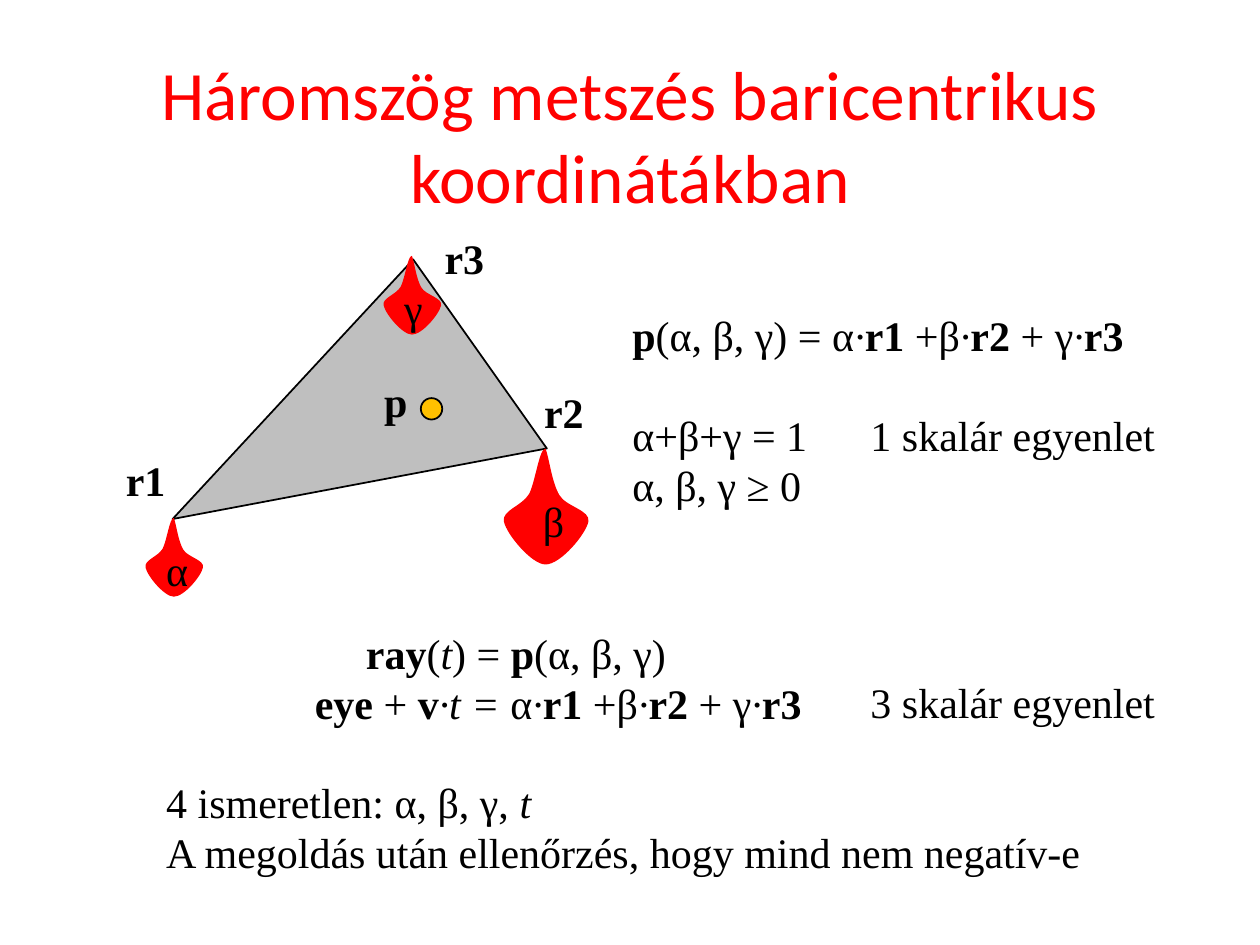
import lxml.etree
import pptx
import pptx.util
import pptx.dml.color
import pptx.enum.shapes
import pptx.enum.text
import pptx.oxml.ns

Inches = pptx.util.Inches
Pt = pptx.util.Pt
Align = pptx.enum.text.PP_ALIGN
qn = pptx.oxml.ns.qn

THEME = {
    "title_font": "Calibri", "body_font": "Times New Roman",
    "title_size": 39.6, "body_size": 24,
    "title": "FF0000", "ink": "000000", "weight": "FF0000",
    "triangle": "BFBFBF", "point": "FFC000",
}

# Content: *bold* and _italic_ mark up the text
TITLE = "Háromszög metszés baricentrikus koordinátákban"
COMBINATION = "α_·_*r1 *+β_·_*r2 *+ γ_·_*r3*"
TRIANGLE = [(1.37, 4.12), (3.28, 2.06), (4.34, 3.56)]
POINT = (3.34, 3.16, 0.17, 0.17)

# Weights hanging from the corners: tip, scale
WEIGHTS = [((4.33, 3.56), 1), ((1.38, 4.11), 0.68), ((3.27, 2.03), 0.68)]
# Outline of a weight, relative to its tip: two control points and an end per curve
DROP = [
    (-0.05, 0), (-0.08, 0.26), (-0.13, 0.36),
    (-0.19, 0.46), (-0.35, 0.49), (-0.33, 0.58),
    (-0.31, 0.68), (-0.11, 0.92), (0, 0.92),
    (0.12, 0.92), (0.32, 0.68), (0.34, 0.58),
    (0.36, 0.49), (0.16, 0.46), (0.11, 0.37),
    (0.05, 0.27), (0.03, 0.08), (0, 0),
]

# Texts: place (left, top, width, height), lines, format
TEXTS = [
    ((0.9, 3.56, 0.52, 0.5), ["*r1*"], {}),
    ((4.22, 3.02, 0.58, 0.5), ["*r2*"], {}),
    ((2.95, 2.93, 0.39, 0.5), ["*p*"], {}),
    ((3.43, 1.8, 0.52, 0.5), ["*r3*"], {}),
    ((4.92, 2.41, 4.61, 1.72),
     ["*p*(α, β, γ) = " + COMBINATION, "α+β+γ = 1", "α, β, γ ≥ 0"],
     {"wrap": True, "first_gap": 28}),
    ((1.22, 4.27, 0.41, 0.51), ["α"], {}),
    ((4.21, 3.88, 0.39, 0.51), ["β"], {}),
    ((3.11, 2.19, 0.34, 0.51), ["γ"], {}),
    ((1.69, 4.93, 4.81, 1.31),
     ["*ray*(_t_) = *p*(α, β, γ)", "*eye* + *v*_·t = _" + COMBINATION],
     {"wrap": True, "align": Align.CENTER, "last_indent": 0.67}),
    ((6.81, 5.32, 2.48, 0.51), ["3 skalár egyenlet"], {}),
    ((6.81, 3.2, 2.48, 0.51), ["1 skalár egyenlet"], {}),
    ((1.22, 6.11, 7.52, 0.91),
     ["4 ismeretlen: α, β, γ, _t_",
      "A megoldás után ellenőrzés, hogy mind nem negatív-e"], {}),
]


def color(name):
    return pptx.dml.color.RGBColor.from_string(THEME[name])


def place(box, area):
    box.left, box.top, box.width, box.height = map(Inches, area)


def styled_pieces(line):
    """Yield (text, bold, italic) for each stretch of a marked-up line."""
    for i, part in enumerate(line.split("*")):
        for j, text in enumerate(part.split("_")):
            if text:
                yield text, i % 2 == 1, j % 2 == 1


def write(box, lines, font="body_font", size="body_size", ink="ink",
          align=Align.LEFT, wrap=False, first_gap=0, last_indent=0):
    frame = box.text_frame
    frame.word_wrap = wrap
    frame.auto_size = pptx.enum.text.MSO_AUTO_SIZE.NONE
    for number, line in enumerate(lines):
        para = frame.add_paragraph() if number else frame.paragraphs[0]
        para.alignment = align
        if first_gap and number == 0:
            para.space_after = Pt(first_gap)
        if last_indent and number == len(lines) - 1:
            para._p.get_or_add_pPr().set("marL", str(Inches(last_indent)))
        for text, bold, italic in styled_pieces(line):
            span = para.add_run()
            span.text = text
            span.font.name = THEME[font]
            span.font.size = Pt(THEME[size])
            span.font.color.rgb = color(ink)
            span.font.bold, span.font.italic = bold, italic


def paint(shape, fill, outlined=True):
    shape.shadow.inherit = False
    shape.fill.solid()
    shape.fill.fore_color.rgb = color(fill)
    if outlined:
        shape.line.color.rgb = color("ink")
        shape.line.width = Pt(1)
    else:
        shape.line.fill.background()


def add_outline(page, points):
    corners = [(Inches(x), Inches(y)) for x, y in points]
    builder = page.shapes.build_freeform(*corners[0])
    builder.add_line_segments(corners[1:], close=True)
    return builder.convert_to_shape()


def add_weight(page, tip, scale):
    """Outline the drop, then turn each three line segments into one curve."""
    points = [(tip[0] + scale * x, tip[1] + scale * y) for x, y in DROP]
    shape = add_outline(page, [tip] + points)
    lines = list(shape._element.iter(qn("a:lnTo")))
    for first in range(0, len(DROP), 3):
        curve = lxml.etree.Element(qn("a:cubicBezTo"))
        lines[first].addprevious(curve)
        for line in lines[first:first + 3]:
            curve.append(line[0])
    for line in lines:
        line.getparent().remove(line)
    return shape


def main():
    deck = pptx.Presentation()
    deck.slide_width, deck.slide_height = Inches(10), Inches(7.5)
    page = deck.slides.add_slide(deck.slide_layouts[5])

    # Title
    title = page.shapes.title
    place(title, (0.75, 0.44, 8.5, 1.25))
    title.text_frame.vertical_anchor = pptx.enum.text.MSO_ANCHOR.MIDDLE
    write(title, [TITLE], font="title_font", size="title_size", ink="title",
          align=Align.CENTER, wrap=True)

    # Triangle, its inner point and the weights
    paint(add_outline(page, TRIANGLE), "triangle")
    point = page.shapes.add_shape(
        pptx.enum.shapes.MSO_SHAPE.OVAL, *map(Inches, POINT))
    paint(point, "point")
    for tip, scale in WEIGHTS:
        paint(add_weight(page, tip, scale), "weight", outlined=False)

    # Labels and equations
    for area, lines, style in TEXTS:
        write(page.shapes.add_textbox(*map(Inches, area)), lines, **style)

    deck.save("out.pptx")


if __name__ == "__main__":
    main()
